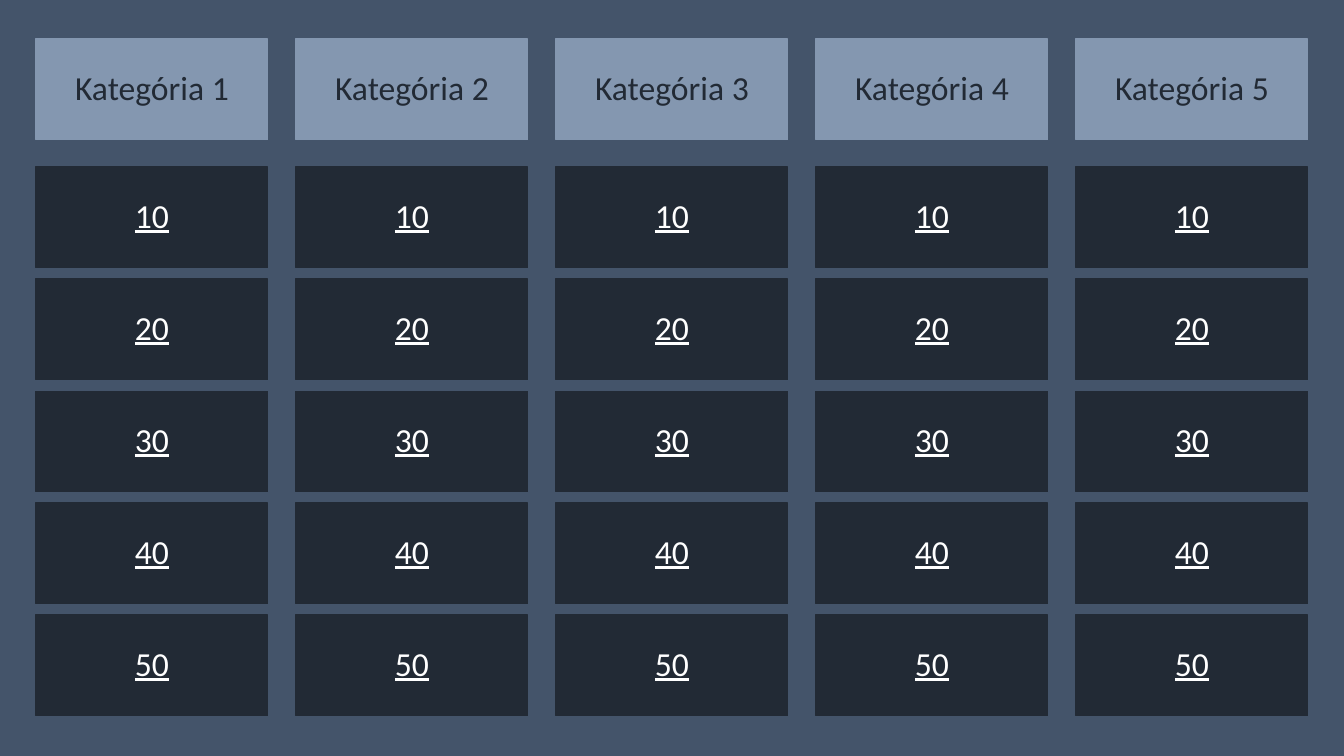
from pptx import Presentation
from pptx.dml.color import RGBColor
from pptx.enum.shapes import MSO_SHAPE
from pptx.enum.text import MSO_ANCHOR, PP_ALIGN
from pptx.util import Emu, Pt

RECTANGLE = MSO_SHAPE.RECTANGLE
MIDDLE = MSO_ANCHOR.MIDDLE
CENTER = PP_ALIGN.CENTER

SLIDE_WIDTH, SLIDE_HEIGHT = 1344, 756
SCALE = 12192000 / SLIDE_WIDTH
COLORS = {
    "background": "44546A",
    "header": "8497B0",
    "dark": "222A35",
    "white": "FFFFFF",
}
CATEGORIES = [f"Kategória {number}" for number in range(1, 6)]
POINTS = [10, 20, 30, 40, 50]

CARD_WIDTH, CARD_HEIGHT = 232, 101
BOARD_LEFT, COLUMN_STEP = 36, 260
HEADER_TOP, POINTS_TOP, ROW_STEP = 39, 167, 112


def px(length):
    return Emu(round(length * SCALE))


def add_card(left, top, text, fill, color, underline):
    shape = slide.shapes.add_shape(
        RECTANGLE, px(left), px(top), px(CARD_WIDTH), px(CARD_HEIGHT))
    shape.shadow.inherit = False
    for format_part in (shape.fill, shape.line.fill):
        format_part.solid()
        format_part.fore_color.rgb = RGBColor.from_string(COLORS[fill])
    shape.line.width = Pt(0.75)

    frame = shape.text_frame
    frame.word_wrap = True
    frame.vertical_anchor = MIDDLE
    paragraph = frame.paragraphs[0]
    paragraph.alignment = CENTER
    paragraph.line_spacing = 0.9
    run = paragraph.add_run()
    run.text = text
    font_format = {"name": "Calibri", "size": Pt(24), "underline": underline}
    for name, value in font_format.items():
        setattr(run.font, name, value)
    run.font.color.rgb = RGBColor.from_string(COLORS[color])


presentation = Presentation()
presentation.slide_width = px(SLIDE_WIDTH)
presentation.slide_height = px(SLIDE_HEIGHT)
slide = presentation.slides.add_slide(presentation.slide_layouts[6])
background = slide.background.fill
background.solid()
background.fore_color.rgb = RGBColor.from_string(COLORS["background"])

for column, category in enumerate(CATEGORIES):
    left = BOARD_LEFT + column * COLUMN_STEP
    add_card(left, HEADER_TOP, category, "header", "dark", False)
    for row, points in enumerate(POINTS):
        top = POINTS_TOP + row * ROW_STEP
        add_card(left, top, str(points), "dark", "white", True)

presentation.save("out.pptx")
